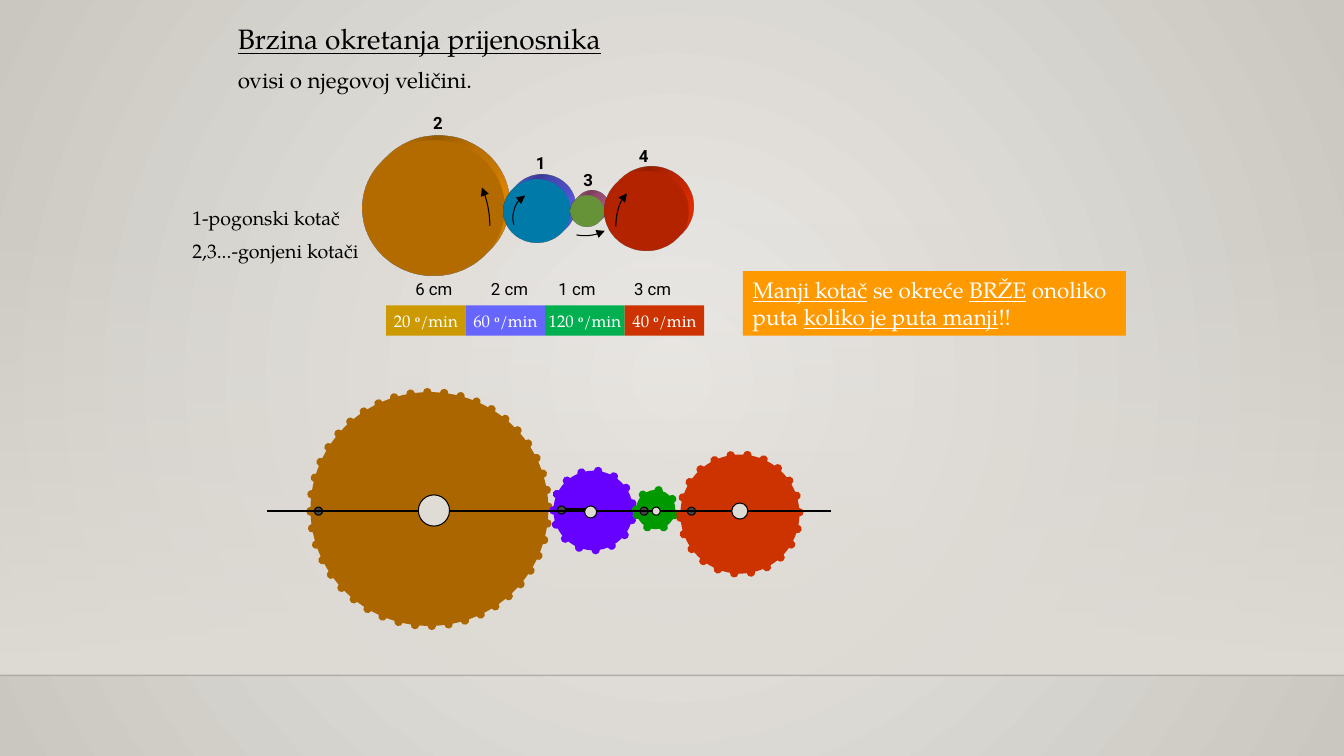
from lxml import etree
from pptx import Presentation
from pptx import util as u
from pptx.dml.color import RGBColor
from pptx.enum import dml, shapes, text
from pptx.oxml import parse_xml
from pptx.oxml.ns import qn

SERIF = "TeX Gyre Pagella"
SANS = "Roboto"
NAMESPACE = 'xmlns:a="http://schemas.openxmlformats.org/drawingml/2006/main"'


def color(value):
    return RGBColor.from_string(value)


def add_alpha(element, percent):
    tone = element.find(".//" + qn("a:srgbClr"))
    etree.SubElement(tone, qn("a:alpha")).set("val", str(percent * 1000))


def set_gradient(fill, first, last):
    fill.gradient()
    for stop, value in zip(fill.gradient_stops, (first, last)):
        stop.color.rgb = color(value)


def set_line(line, value, width):
    line.color.rgb = color(value)
    line.width = u.Pt(width)


def add_block(page, kind, left, top, width, height, fill=None, line=None, weight=0.75):
    block = page.shapes.add_shape(kind, u.Pt(left), u.Pt(top), u.Pt(width), u.Pt(height))
    block.shadow.inherit = False
    if fill:
        block.fill.solid()
        block.fill.fore_color.rgb = color(fill)
    if line:
        set_line(block.line, line, weight)
    else:
        block.line.fill.background()
    return block


def add_disc(page, left, top, size, fill, line="000000"):
    return add_block(page, shapes.MSO_SHAPE.OVAL, left, top, size, size, fill, line)


def add_straight(page, start, end, y, value="000000", width=0.75):
    rule = page.shapes.add_connector(
        shapes.MSO_CONNECTOR.STRAIGHT, u.Pt(start), u.Pt(y), u.Pt(end), u.Pt(y))
    set_line(rule.line, value, width)
    etree.SubElement(rule._element.spPr, qn("a:effectLst"))
    return rule


def style(span, size, face, value="000000", bold=False, underline=False):
    span.font.size = u.Pt(size)
    span.font.name = face
    span.font.color.rgb = color(value)
    span.font.bold = bold
    span.font.underline = underline


def add_span(para, words, size, **options):
    span = para.add_run()
    span.text = words
    style(span, size, SERIF, "FFFFFF", **options)
    return span


def add_label(page, words, left, top, width, bold=False):
    box = page.shapes.add_textbox(u.Pt(left), u.Pt(top), u.Pt(width), u.Pt(21.6))
    box.text_frame.word_wrap = True
    box.text_frame.text = words
    para = box.text_frame.paragraphs[0]
    para.alignment = text.PP_ALIGN.CENTER
    style(para.runs[0], 12, SANS, bold=bold)


def fill_lines(box, lines, gap):
    frame = box.text_frame
    frame.word_wrap = True
    frame.auto_size = text.MSO_AUTO_SIZE.NONE
    frame.vertical_anchor = text.MSO_ANCHOR.TOP
    frame.text = "\n".join(words for words, size, underline in lines)
    for index, (para, (words, size, underline)) in enumerate(zip(frame.paragraphs, lines)):
        para.alignment = text.PP_ALIGN.LEFT
        para.space_before = u.Pt(gap if index else 0)
        style(para.runs[0], size, SERIF, underline=underline)


def add_scenery(page):
    set_gradient(page.background.fill, "ECEAE7", "CAC7C1")
    gradient = page._element.find(".//" + qn("a:gradFill"))
    gradient.replace(gradient.find(qn("a:lin")), parse_xml(
        f'<a:path {NAMESPACE} path="circle">'
        '<a:fillToRect l="50000" t="50000" r="50000" b="50000"/></a:path>'))
    wall = add_block(page, shapes.MSO_SHAPE.RECTANGLE, 0, 159.1, 960, 323.3)
    set_gradient(wall.fill, "DFDBD5", "DFDBD5")
    wall.fill.gradient_angle = 270
    add_alpha(wall._element.spPr.find(qn("a:gradFill")), 0)
    edge = add_straight(page, 0, 960, 482.4, "000001", 1)
    add_alpha(edge._element.spPr, 20)


def add_gear(page, left, top, width, height, fill, pin, spoke=None):
    gear = add_block(page, shapes.MSO_SHAPE.OVAL, left, top, width, height, fill, fill, 6)
    gear.line.dash_style = dml.MSO_LINE.ROUND_DOT
    gear._element.spPr.find(qn("a:ln")).set("cap", "rnd")
    if spoke:
        add_straight(page, *spoke, 364.3, width=2.25)
    add_disc(page, *pin, 5.8, "454545")
    return gear


def add_wheel(page, left, top, width, height, fill, side):
    wheel = add_block(page, shapes.MSO_SHAPE.OVAL, left, top, width, height, fill)
    properties = wheel._element.spPr
    properties.append(parse_xml(
        f'<a:scene3d {NAMESPACE}><a:camera prst="legacyObliqueTopRight"/>'
        '<a:lightRig rig="legacyFlat3" dir="b"/></a:scene3d>'))
    properties.append(parse_xml(
        f'<a:sp3d {NAMESPACE} extrusionH="{u.Pt(10)}" prstMaterial="legacyMatte">'
        '<a:bevelT w="13500" h="13500" prst="angle"/>'
        '<a:bevelB w="13500" h="13500" prst="angle"/>'
        f'<a:extrusionClr><a:srgbClr val="{side}"/></a:extrusionClr></a:sp3d>'))


def add_turn_arrow(page, start, first, second, end, steps=12):
    points = []
    for step in range(steps + 1):
        t = step / steps
        weights = ((1 - t) ** 3, 3 * t * (1 - t) ** 2, 3 * t * t * (1 - t), t ** 3)
        points.append(tuple(
            u.Pt(sum(w * p[axis] for w, p in zip(weights, (start, first, second, end))))
            for axis in (0, 1)))
    builder = page.shapes.build_freeform(*points[0])
    builder.add_line_segments(points[1:], close=False)
    arrow = builder.convert_to_shape()
    arrow.shadow.inherit = False
    arrow.fill.background()
    set_line(arrow.line, "000000", 0.75)
    outline = arrow._element.spPr.find(qn("a:ln"))
    etree.SubElement(outline, qn("a:tailEnd")).set("type", "triangle")


def add_speed(page, left, speed, fill):
    cell = add_block(page, shapes.MSO_SHAPE.RECTANGLE, left, 218.2, 56.8, 21.6, fill)
    frame = cell.text_frame
    frame.margin_left = frame.margin_right = 0
    frame.vertical_anchor = text.MSO_ANCHOR.TOP
    para = frame.paragraphs[0]
    para.alignment = text.PP_ALIGN.CENTER
    add_span(para, f"{speed} ", 12)
    degree = add_span(para, "o", 12, bold=True)
    degree._r.get_or_add_rPr().set("baseline", "30000")
    add_span(para, "/min", 12)


def add_rule_box(page):
    box = add_block(page, shapes.MSO_SHAPE.RECTANGLE, 530.6, 193.7, 273.6, 46.1, "FF9900")
    box.text_frame.vertical_anchor = text.MSO_ANCHOR.TOP
    para = box.text_frame.paragraphs[0]
    para.alignment = text.PP_ALIGN.LEFT
    pieces = ("Manji kotač", " se okreće ", "BRŽE", " onoliko puta ", "koliko je puta manji", "!!")
    for index, words in enumerate(pieces):
        add_span(para, words, 16, underline=index % 2 == 0)


def main():
    deck = Presentation()
    deck.slide_width, deck.slide_height = u.Pt(960), u.Pt(540)
    page = deck.slides.add_slide(deck.slide_layouts[5])
    add_scenery(page)

    title = page.shapes.title
    title.left, title.top, title.width, title.height = map(u.Pt, (162.7, 11.5, 470.9, 60.5))
    fill_lines(title, [("Brzina okretanja prijenosnika", 20, True),
                       ("ovisi o njegovoj veličini.", 16, False)], 8)

    add_gear(page, 221.8, 280.1, 169.9, 167, "AC6600", (224.6, 362.2)).rotation = 359
    add_gear(page, 395.3, 336.2, 56.9, 56.9, "6600FF", (398.2, 361.4), (400.3, 423.4))
    add_gear(page, 454.3, 349.9, 28.1, 28.1, "009900", (457.2, 362.2))
    add_gear(page, 486, 324.7, 85, 85, "CC3300", (491, 362.2))
    add_straight(page, 190.8, 593.3, 365)
    for hub in ((298.8, 353.5, 22.3), (522.7, 359.3, 11.5), (465.8, 362.2, 5.8), (417.6, 361.4, 8.6)):
        add_disc(page, *hub, "DFDBD5")

    for number, left, top in (("1", 372.2, 105.8), ("2", 298.8, 77), ("3", 406.1, 117.4), ("4", 445.7, 100.8)):
        add_label(page, number, left, top, 28.1, bold=True)
    for size, left, width in (("6 cm", 281.5, 56.9), ("2 cm", 338.4, 51.1), ("1 cm", 389.5, 45.4), ("3 cm", 440.6, 51.1)):
        add_label(page, size, left, 195.8, width)
    legend = page.shapes.add_textbox(u.Pt(130.3), u.Pt(143.3), u.Pt(141.8), u.Pt(49.7))
    fill_lines(legend, [("1-pogonski kotač", 14, False), ("2,3...-gonjeni kotači", 14, False)], 7)

    speeds = ((20, "CC9900"), (60, "6666FF"), (120, "00B050"), (40, "CC3300"))
    for index, (speed, fill) in enumerate(speeds):
        add_speed(page, 275.8 + index * 56.8, speed, fill)

    add_wheel(page, 259.2, 100.1, 101.5, 96.5, "FF9900", "FF9900")
    add_wheel(page, 360, 128.2, 47.5, 45.4, "00B0F0", "6666FF")
    add_wheel(page, 407.5, 139.7, 23.8, 22.3, "92D050", "CC6699")
    add_wheel(page, 432, 122.4, 59.8, 56.9, "FF3300", "FF3300")
    add_turn_arrow(page, (367.2, 160.6), (365, 156), (367, 143), (375.1, 139.7))
    add_turn_arrow(page, (349.9, 161.3), (349.9, 151.9), (347.8, 141.8), (344.2, 133.9))
    add_turn_arrow(page, (411.8, 167.8), (418, 169), (425, 168.5), (432, 164.9))
    add_turn_arrow(page, (439.9, 162), (439.9, 151.9), (442.8, 142.6), (447.8, 138.2))
    add_rule_box(page)

    deck.save("out.pptx")


if __name__ == "__main__":
    main()
